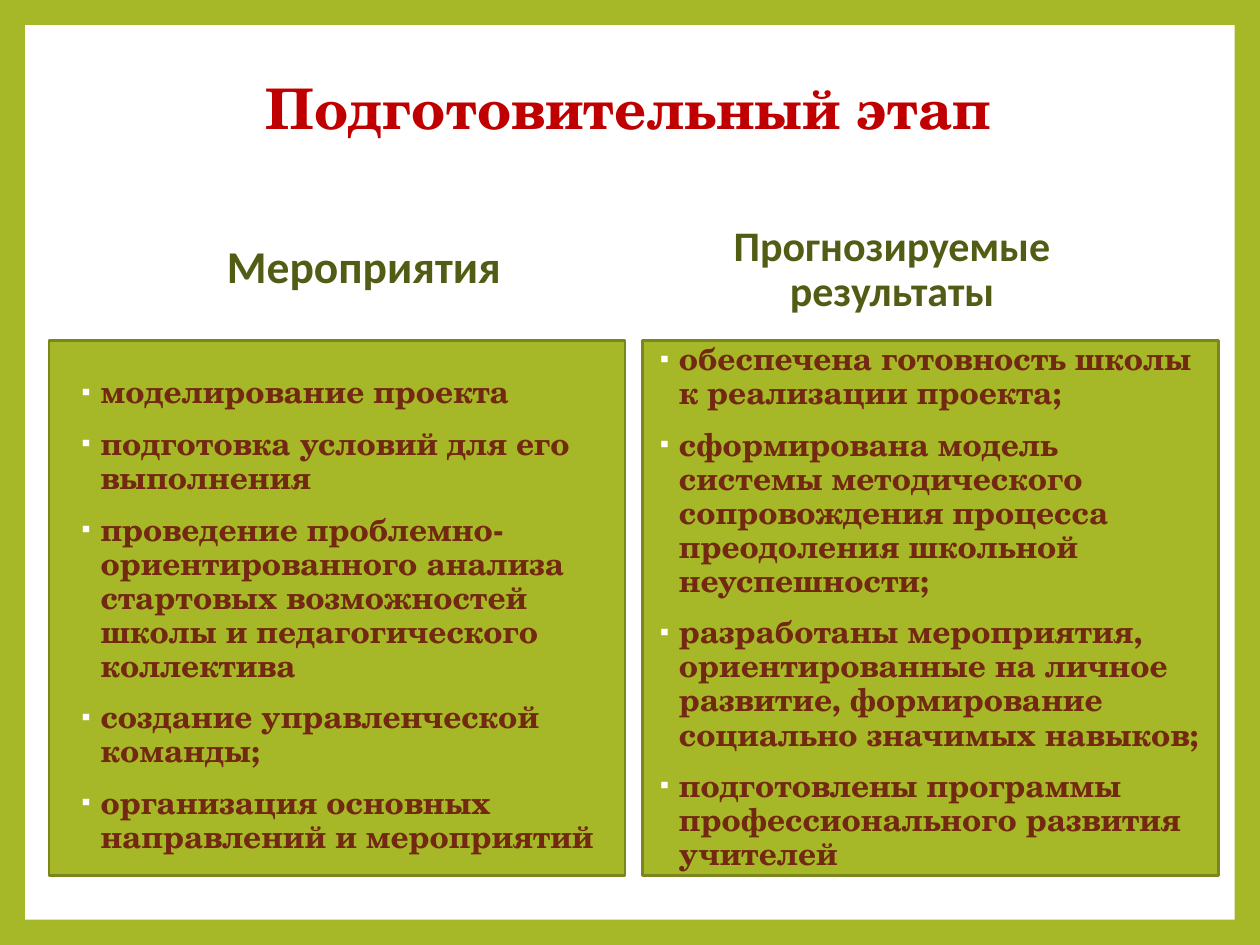
from dataclasses import dataclass

from lxml import etree
from pptx import Presentation
from pptx import util as u
from pptx.dml.color import RGBColor
from pptx.enum import shapes, text
from pptx.oxml import ns


@dataclass(frozen=True)
class Theme:
    green: str = "A6B727"
    border: str = "7B871D"
    paper: str = "FFFFFF"
    title: str = "C00000"
    heading: str = "535C14"
    body: str = "722811"
    serif: str = "TeX Gyre Schola"
    sans: str = "Calibri"
    title_size: int = 32
    heading_size: int = 26
    long_heading_size: int = 24
    body_size: int = 18


THEME = Theme()
WIDTH, HEIGHT = 10, 7.5
FRAME = 0.2
COLUMN_TOP, COLUMN_WIDTH, COLUMN_HEIGHT = 1.72, 4.57, 5.23
COLUMN_LEFTS = (0.39, 5.1)
PANEL_OFFSET = 0.98

ACTIVITIES = (
    "моделирование проекта",
    "подготовка условий для его выполнения",
    "проведение проблемно-ориентированного анализа стартовых возможностей "
    "школы и педагогического коллектива",
    "создание управленческой команды;",
    "организация основных направлений и мероприятий",
)
RESULTS = (
    "обеспечена готовность школы к реализации проекта;",
    "сформирована модель системы методического сопровождения процесса "
    "преодоления школьной неуспешности;",
    "разработаны мероприятия, ориентированные на личное развитие, "
    "формирование социально значимых навыков;",
    "подготовлены программы профессионального развития учителей",
)


def inches(box):
    return [u.Inches(length) for length in box]


def add_rectangle(slide, box, fill, line=None):
    shape = slide.shapes.add_shape(shapes.MSO_SHAPE.RECTANGLE, *inches(box))
    shape.shadow.inherit = False
    shape.fill.solid()
    shape.fill.fore_color.rgb = RGBColor.from_string(fill)
    if line:
        shape.line.color.rgb = RGBColor.from_string(line)
        shape.line.width = u.Pt(1.5)
    else:
        shape.line.fill.background()
    return shape


def style_paragraph(paragraph, size, name, color):
    paragraph.line_spacing = 0.9
    font = paragraph.font
    font.size, font.name, font.bold = u.Pt(size), name, True
    font.color.rgb = RGBColor.from_string(color)


def add_caption(slide, box, caption, size, name, color):
    """Add one centred line of heading text, anchored in the middle."""
    frame = slide.shapes.add_textbox(*inches(box)).text_frame
    frame.word_wrap = True
    frame.vertical_anchor = text.MSO_ANCHOR.MIDDLE
    paragraph = frame.paragraphs[0]
    paragraph.text = caption
    paragraph.alignment = text.PP_ALIGN.CENTER
    style_paragraph(paragraph, size, name, color)


def add_bullet(paragraph):
    properties = paragraph._p.get_or_add_pPr()
    properties.set("marL", str(u.Inches(0.19)))
    properties.set("indent", str(u.Inches(-0.15)))
    color = etree.SubElement(properties, ns.qn("a:buClr"))
    etree.SubElement(color, ns.qn("a:srgbClr"), val=THEME.paper)
    etree.SubElement(properties, ns.qn("a:buSzPct"), val="80000")
    etree.SubElement(properties, ns.qn("a:buFont"), typeface=THEME.sans)
    etree.SubElement(properties, ns.qn("a:buChar"), char="▪")


def fill_list(frame, items, anchor):
    frame.word_wrap = True
    frame.vertical_anchor = anchor
    for index, item in enumerate(items):
        paragraph = frame.add_paragraph() if index else frame.paragraphs[0]
        paragraph.text = item
        paragraph.alignment = text.PP_ALIGN.LEFT
        paragraph.space_before = u.Pt(10)
        add_bullet(paragraph)
        style_paragraph(paragraph, THEME.body_size, THEME.serif, THEME.body)


def add_panel(slide, box):
    left, top, width, height = box
    panel_box = (left, top + PANEL_OFFSET, width, height - PANEL_OFFSET)
    return add_rectangle(slide, panel_box, THEME.green, THEME.border)


def add_activities(slide, box):
    left, top, width, _ = box
    add_panel(slide, box)
    add_caption(slide, (left + 0.55, top, width - 0.67, 0.83), "Мероприятия",
                THEME.heading_size, THEME.sans, THEME.heading)
    list_box = (left + 0.12, top + 1.22, width - 0.24, 3.72)
    fill_list(slide.shapes.add_textbox(*inches(list_box)).text_frame,
              ACTIVITIES, text.MSO_ANCHOR.TOP)


def add_results(slide, box):
    left, top, width, _ = box
    add_caption(slide, (left, top, width - 0.61, 0.85),
                "Прогнозируемые результаты",
                THEME.long_heading_size, THEME.sans, THEME.heading)
    fill_list(add_panel(slide, box).text_frame, RESULTS,
              text.MSO_ANCHOR.MIDDLE)


def add_backdrop(slide, box):
    """Colour the background and lay white paper inside the box's frame."""
    left, top, width, height = box
    slide.background.fill.solid()
    slide.background.fill.fore_color.rgb = RGBColor.from_string(THEME.green)
    paper_box = (left + FRAME, top + FRAME,
                 width - 2 * FRAME, height - 2 * FRAME)
    add_rectangle(slide, paper_box, THEME.paper)


def main():
    presentation = Presentation()
    presentation.slide_width = u.Inches(WIDTH)
    presentation.slide_height = u.Inches(HEIGHT)
    slide = presentation.slides.add_slide(presentation.slide_layouts[6])
    add_backdrop(slide, (0, 0, WIDTH, HEIGHT))
    add_caption(slide, (0.94, 0.44, 8.1, 0.89), "Подготовительный этап",
                THEME.title_size, THEME.serif, THEME.title)
    for add_column, left in zip((add_activities, add_results), COLUMN_LEFTS):
        add_column(slide, (left, COLUMN_TOP, COLUMN_WIDTH, COLUMN_HEIGHT))
    presentation.save("out.pptx")


if __name__ == "__main__":
    main()
